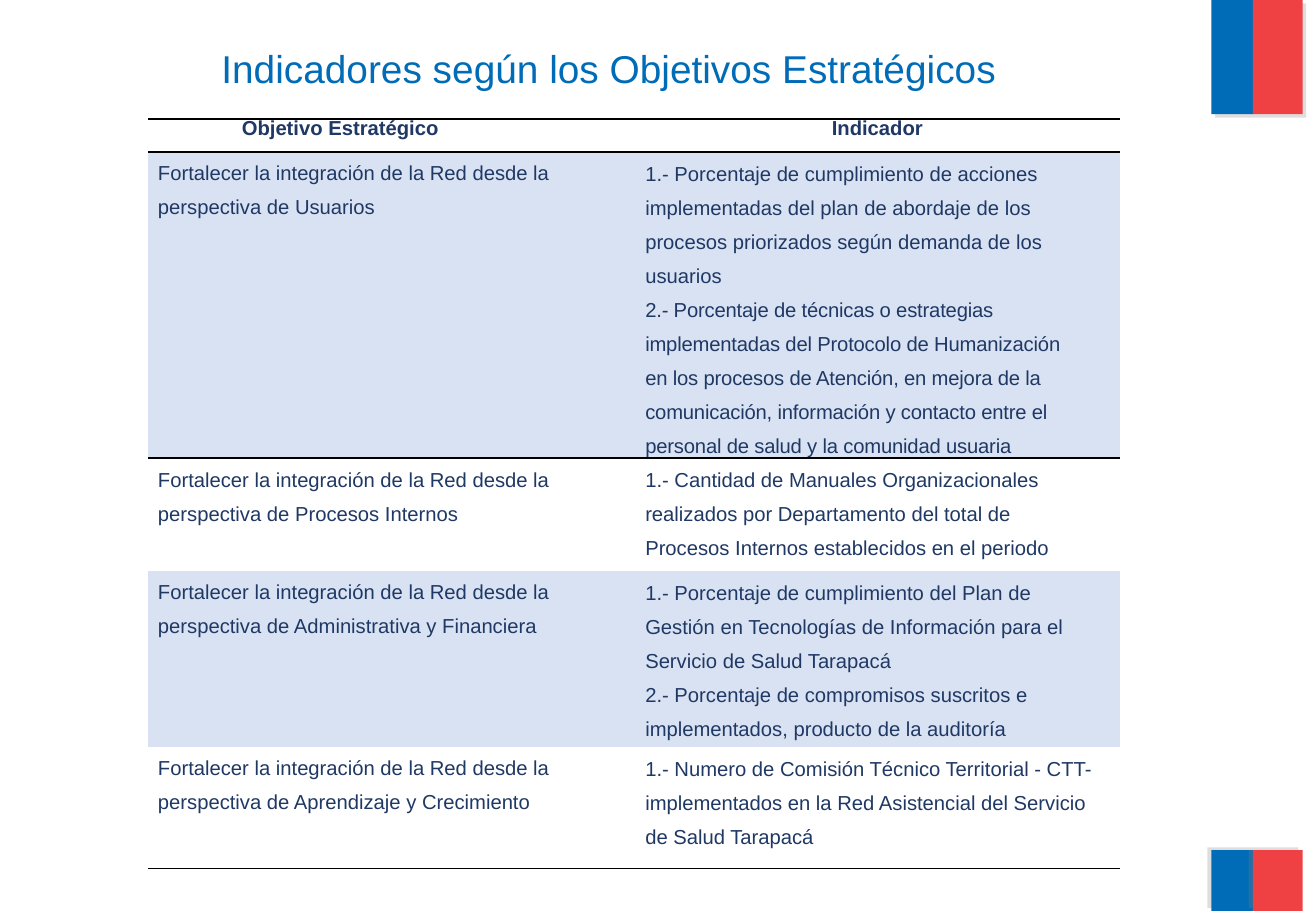
from dataclasses import dataclass
from typing import Any

from lxml.etree import SubElement
from pptx import Presentation
from pptx.dml.color import RGBColor as RGB
from pptx.enum.shapes import MSO_SHAPE as Preset
from pptx.enum.text import MSO_ANCHOR as Anchor, MSO_AUTO_SIZE as AutoSize, PP_ALIGN as Align
from pptx.oxml.ns import qn
from pptx.util import Inches, Pt


@dataclass(frozen=True)
class Theme:
    font: str = "Arial"
    blue: str = "006CB7"
    red: str = "EF4144"
    navy: str = "1F3864"
    band: str = "D9E2F3"
    rule: str = "000000"
    shadow: str = "808080"
    title_size: int = 23
    table_size: int = 12


@dataclass(frozen=True)
class FlagBlock:
    left: float
    top: float
    width: float
    height: float
    color: str
    shadow_angle: int


@dataclass(frozen=True)
class Line:
    text: str
    left_indent: float = 0.09
    right_indent: float = 0.18
    spacing: Any = 1.5
    align: Any = Align.LEFT
    bold: bool = False
    tracking: int = 0


@dataclass(frozen=True)
class Row:
    height: float
    cells: tuple[tuple[Line, ...], ...]
    banded: bool = False
    edges: tuple[str, ...] = ()


THEME = Theme()
NO_GRID_STYLE = "{2D5ABB26-0587-4C30-8999-92F81FD0307C}"

FLAG_BLOCKS = (
    FlagBlock(9.97, -0.01, 0.34, 0.95, THEME.blue, 45),
    FlagBlock(10.31, 0, 0.41, 0.94, THEME.red, 45),
    FlagBlock(9.97, 7, 0.34, 0.5, THEME.blue, 215),
    FlagBlock(10.31, 7, 0.41, 0.5, THEME.red, 215),
)


def objective(perspective: str, spacing: float = 1.47) -> tuple[Line, ...]:
    text = f"Fortalecer la integración de la Red desde la perspectiva de {perspective}"
    return (Line(text, 0.08, 0, spacing),)


ROWS = (
    Row(0.27, (
        (Line("Objetivo Estratégico", 0.77, 0, Pt(12.4), bold=True),),
        (Line("Indicador", 1.16, 1.16, Pt(12.4), Align.CENTER, True),),
    ), edges=("a:lnT", "a:lnB")),
    Row(2.52, (objective("Usuarios"), (
        Line("1.- Porcentaje de cumplimiento de acciones implementadas del plan de abordaje de los "
             "procesos priorizados según demanda de los usuarios"),
        Line("2.- Porcentaje de técnicas o estrategias implementadas del Protocolo de Humanización "
             "en los procesos de Atención, en mejora de la comunicación, información y contacto "
             "entre el personal de salud y la comunidad usuaria", right_indent=0.4, tracking=-10),
    )), banded=True, edges=("a:lnT",)),
    Row(0.93, (objective("Procesos Internos", 1.5), (
        Line("1.- Cantidad de Manuales Organizacionales realizados por Departamento del total de "
             "Procesos Internos establecidos en el periodo"),
    ))),
    Row(1.45, (objective("Administrativa y Financiera"), (
        Line("1.- Porcentaje de cumplimiento del Plan de Gestión en Tecnologías de Información "
             "para el Servicio de Salud Tarapacá"),
        Line("2.- Porcentaje de compromisos suscritos e implementados, producto de la auditoría"),
    )), banded=True),
    Row(1, (objective("Aprendizaje y Crecimiento"), (
        Line("1.- Numero de Comisión Técnico Territorial - CTT- implementados en la Red "
             "Asistencial del Servicio de Salud Tarapacá"),
    )), edges=("a:lnB",)),
)


def apply(target: Any, values: dict[str, Any]) -> None:
    for name, value in values.items():
        setattr(target, name, value)


def add_color(parent: Any, color: str) -> Any:
    return SubElement(parent, qn("a:srgbClr"), val=color)


def add_span(para: Any, text: str, size: int, color: str, bold: bool = False) -> Any:
    span = para.add_run()
    span.text = text
    apply(span.font, {"name": THEME.font, "size": Pt(size), "bold": bold})
    span.font.color.rgb = RGB.from_string(color)
    return span


def add_flag_block(page: Any, block: FlagBlock) -> None:
    box = page.shapes.add_shape(Preset.RECTANGLE, Inches(block.left), Inches(block.top),
                                Inches(block.width), Inches(block.height))
    box.fill.solid()
    box.fill.fore_color.rgb = RGB.from_string(block.color)
    box.line.fill.background()
    box.shadow.inherit = False
    effects = box._element.spPr.find(qn("a:effectLst"))
    shadow = SubElement(effects, qn("a:outerShdw"), blurRad="0", dist=str(Pt(3)),
                        dir=str(block.shadow_angle * 60000), algn="ctr", rotWithShape="0")
    SubElement(add_color(shadow, THEME.shadow), qn("a:alpha"), val="25000")


def add_title(page: Any, text: str) -> None:
    title = page.shapes.title
    apply(title, {"left": Inches(0.18), "top": Inches(0.32),
                  "width": Inches(9.67), "height": Inches(0.8)})
    apply(title.text_frame, {"auto_size": AutoSize.NONE, "vertical_anchor": Anchor.TOP,
                             "word_wrap": True})
    para = title.text_frame.paragraphs[0]
    para.alignment = Align.CENTER
    add_span(para, text, THEME.title_size, THEME.blue)


def write_line(para: Any, line: Line) -> None:
    apply(para, {"alignment": line.align, "line_spacing": line.spacing})
    properties = para._p.get_or_add_pPr()
    for side, indent in {"marL": line.left_indent, "marR": line.right_indent, "indent": 0}.items():
        properties.set(side, str(Inches(indent)))
    span = add_span(para, line.text, THEME.table_size, THEME.navy, line.bold)
    if line.tracking:
        span.font._element.set("spc", str(line.tracking))


def fill_cell(cell: Any, lines: tuple[Line, ...], row: Row) -> None:
    apply(cell, {f"margin_{side}": 0 for side in ("left", "top", "right", "bottom")})
    for index, line in enumerate(lines):
        frame = cell.text_frame
        write_line(frame.add_paragraph() if index else frame.paragraphs[0], line)
    for edge in row.edges:
        border = SubElement(cell._tc.get_or_add_tcPr(), qn(edge), w=str(Pt(1)))
        add_color(SubElement(border, qn("a:solidFill")), THEME.rule)
    if row.banded:
        cell.fill.solid()
        cell.fill.fore_color.rgb = RGB.from_string(THEME.band)
    else:
        cell.fill.background()


def add_indicator_table(page: Any) -> None:
    height = sum(row.height for row in ROWS)
    table = page.shapes.add_table(len(ROWS), 2, Inches(1.22), Inches(0.98),
                                  Inches(8), Inches(height)).table
    apply(table, {"first_row": False, "horz_banding": False})
    table._tbl.tblPr.find(qn("a:tableStyleId")).text = NO_GRID_STYLE
    for table_row, row in zip(table.rows, ROWS):
        table_row.height = Inches(row.height)
        for cell, lines in zip(table_row.cells, row.cells):
            fill_cell(cell, lines, row)


def main() -> None:
    deck = Presentation()
    apply(deck, {"slide_width": Inches(10.83), "slide_height": Inches(7.5)})
    page = deck.slides.add_slide(deck.slide_layouts[5])
    for block in FLAG_BLOCKS:
        add_flag_block(page, block)
    add_title(page, "Indicadores según los Objetivos Estratégicos")
    add_indicator_table(page)
    deck.save("out.pptx")


if __name__ == "__main__":
    main()
